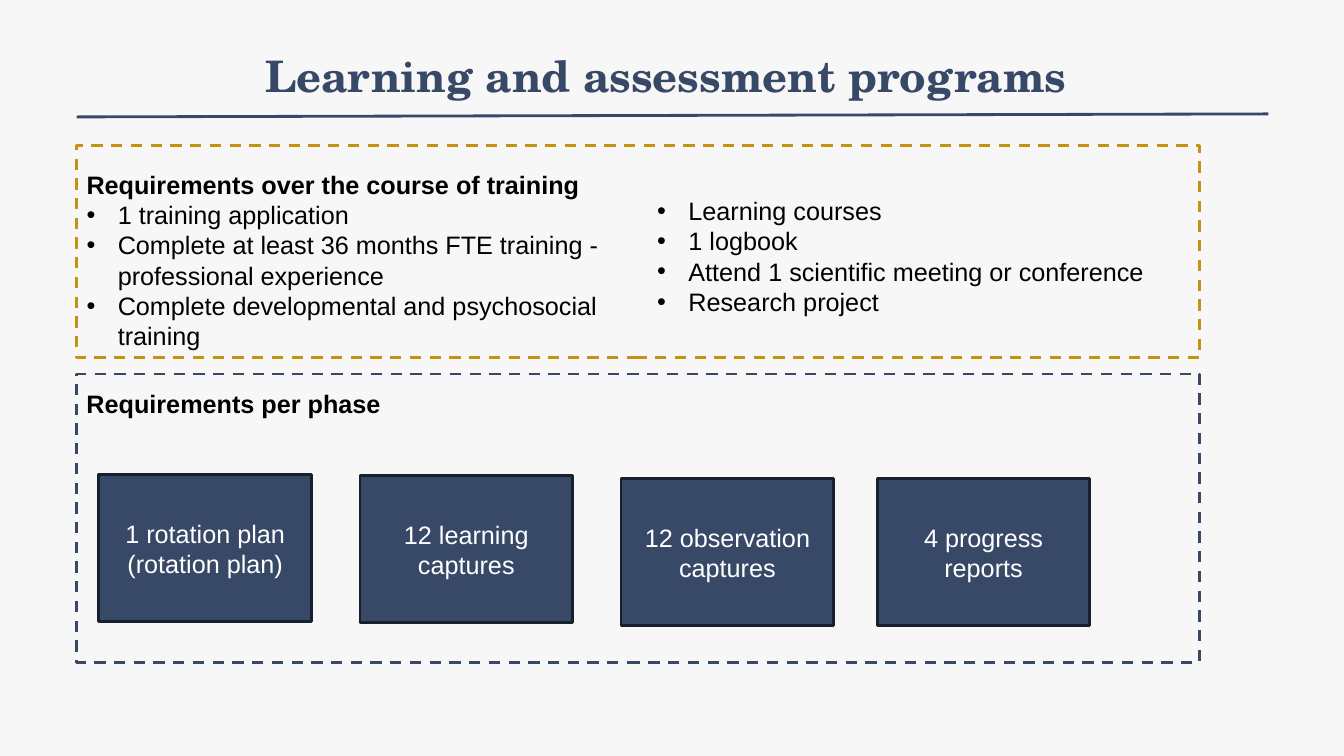
import pptx
import pptx.dml.color
import pptx.enum.dml
import pptx.enum.shapes
import pptx.enum.text
import pptx.oxml.ns
import pptx.util
from lxml import etree

RGBColor = pptx.dml.color.RGBColor
NAVY = RGBColor(0x38, 0x49, 0x67)
DARK_NAVY = RGBColor(0x19, 0x20, 0x2D)
GOLD = RGBColor(0xC6, 0x92, 0x14)
PALE_GREY = RGBColor(0xF7, 0xF7, 0xF7)
BLACK = RGBColor(0, 0, 0)
WHITE = RGBColor(0xFF, 0xFF, 0xFF)

CELL = pptx.util.Inches(0.1)  # one column or row of the grid
LEFT_EDGE, FRAME_WIDTH = 7.6, 111.4
TITLE_ONLY = 5
ALIGN = pptx.enum.text.PP_ALIGN
ANCHOR = pptx.enum.text.MSO_ANCHOR
DASH = pptx.enum.dml.MSO_LINE.DASH
RECTANGLE = pptx.enum.shapes.MSO_SHAPE.RECTANGLE
STRAIGHT = pptx.enum.shapes.MSO_CONNECTOR.STRAIGHT


def grid(*cells):
    return [round(cell * CELL) for cell in cells]


def apply(target, values):
    for name, value in values.items():
        setattr(target, name, value)


class SlideBuilder:
    title_font = {"name": "TeX Gyre Schola", "size": pptx.util.Pt(31), "bold": True}
    body_font = {"name": "Arial", "size": pptx.util.Pt(18), "bold": False}
    line_width = pptx.util.Pt(2)

    def __init__(self, deck):
        self.page = deck.slides.add_slide(deck.slide_layouts[TITLE_ONLY])
        self.page.background.fill.solid()
        self.page.background.fill.fore_color.rgb = PALE_GREY

    def add_span(self, para, text, font, color, align=ALIGN.LEFT):
        para.alignment = align
        span = para.add_run()
        span.text = text
        apply(span.font, font)
        span.font.color.rgb = color

    def outline(self, line, color):
        line.color.rgb = color
        line.width = self.line_width

    def title(self, text, *cells):
        box = self.page.shapes.title
        apply(box, dict(zip(("left", "top", "width", "height"), grid(*cells))))
        side, edge = grid(0.7, 0.4)
        frame = box.text_frame
        apply(frame, {"margin_left": side, "margin_right": side,
                      "margin_top": edge, "margin_bottom": edge,
                      "vertical_anchor": ANCHOR.MIDDLE, "word_wrap": True,
                      "auto_size": pptx.enum.text.MSO_AUTO_SIZE.NONE})
        self.add_span(frame.paragraphs[0], text, self.title_font, NAVY, ALIGN.CENTER)

    def rule(self, *cells):
        rule = self.page.shapes.add_connector(STRAIGHT, *grid(*cells))
        self.outline(rule.line, NAVY)
        etree.SubElement(rule._element.spPr, pptx.oxml.ns.qn("a:effectLst"))

    def rectangle(self, color, *cells):
        box = self.page.shapes.add_shape(RECTANGLE, *grid(*cells))
        box.shadow.inherit = False
        self.outline(box.line, color)
        return box

    def dashed_frame(self, color, top, height):
        box = self.rectangle(color, LEFT_EDGE, top, FRAME_WIDTH, height)
        box.fill.background()
        box.line.dash_style = DASH

    def card(self, text, left, top):
        box = self.rectangle(DARK_NAVY, left, top, 21.1, 14.6)
        box.fill.solid()
        box.fill.fore_color.rgb = NAVY
        frame = box.text_frame
        apply(frame, {"word_wrap": True, "vertical_anchor": ANCHOR.MIDDLE})
        self.add_span(frame.paragraphs[0], text, self.body_font, WHITE, ALIGN.CENTER)

    def bullet(self, para):
        indent, = grid(3.1)
        props = para._p.get_or_add_pPr()
        props.set("marL", str(indent))
        props.set("indent", str(-indent))
        font = etree.SubElement(props, pptx.oxml.ns.qn("a:buFont"))
        font.set("typeface", "Arial")
        mark = etree.SubElement(props, pptx.oxml.ns.qn("a:buChar"))
        mark.set("char", "•")

    def text_block(self, cells, heading=None, bullets=()):
        frame = self.page.shapes.add_textbox(*grid(*cells)).text_frame
        frame.word_wrap = True
        lines = ([heading] if heading else []) + list(bullets)
        for index, text in enumerate(lines):
            para = frame.add_paragraph() if index else frame.paragraphs[0]
            is_heading = text == heading
            if not is_heading:
                self.bullet(para)
            self.add_span(para, text, {**self.body_font, "bold": is_heading}, BLACK)


def main():
    deck = pptx.Presentation()
    deck.slide_width = pptx.util.Inches(13.33)
    deck.slide_height = pptx.util.Inches(7.5)
    slide = SlideBuilder(deck)

    # Title and rule
    slide.title("Learning and assessment programs ", 16.6, 2.9, 100.1, 9.1)
    slide.rule(LEFT_EDGE, 11.6, 125.8, 11.3)

    # Requirements for the whole training
    slide.dashed_frame(GOLD, 14.4, 21.1)
    slide.text_block((LEFT_EDGE, 16.3, 60.2, 19.2),
                     "Requirements over the course of training",
                     ["1 training application",
                      "Complete at least 36 months FTE training - professional experience",
                      "Complete developmental and psychosocial training"])
    slide.text_block((64.2, 18.9, 66.7, 13.1),
                     bullets=["Learning courses", "1 logbook",
                              "Attend 1 scientific meeting or conference",
                              "Research project"])

    # Requirements for each phase
    slide.dashed_frame(NAVY, 37.1, 28.6)
    slide.text_block((LEFT_EDGE, 38, 66.7, 4), "Requirements per phase")
    for text, left, top in [("1 rotation plan (rotation plan)", 9.8, 47.1),
                            ("12 learning captures", 35.7, 47.2),
                            ("12 observation captures", 61.6, 47.5),
                            ("4 progress reports", 87, 47.5)]:
        slide.card(text, left, top)

    deck.save("out.pptx")


if __name__ == "__main__":
    main()
